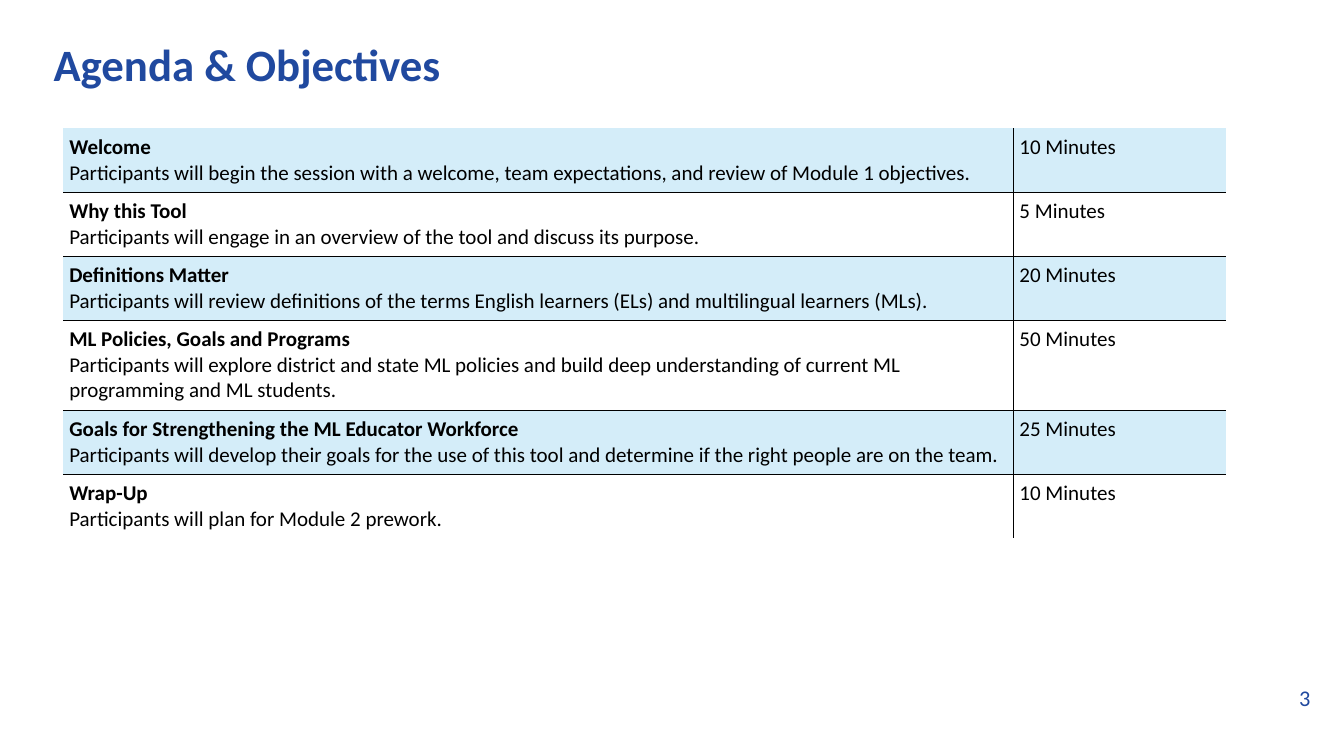
import pptx
import pptx.util
import pptx.dml.color
import pptx.enum.text
import pptx.oxml
import pptx.oxml.ns

PX = 9525
BLUE = pptx.dml.color.RGBColor(0x20, 0x49, 0x9F)
BLACK = pptx.dml.color.RGBColor(0, 0, 0)
BAND = pptx.dml.color.RGBColor(0xD4, 0xED, 0xF9)
ANCHOR = pptx.enum.text.MSO_ANCHOR
ALIGN = pptx.enum.text.PP_ALIGN

AGENDA = [
    ("Welcome",
     "Participants will begin the session with a welcome, team expectations, and review of Module 1 objectives.",
     "10 Minutes", 61),
    ("Why this Tool",
     "Participants will engage in an overview of the tool and discuss its purpose.",
     "5 Minutes", 61),
    ("Definitions Matter",
     "Participants will review definitions of the terms English learners (ELs) and multilingual learners (MLs).",
     "20 Minutes", 61),
    ("ML Policies, Goals and Programs",
     "Participants will explore district and state ML policies and build deep understanding of current ML "
     "programming and ML students.",
     "50 Minutes", 86),
    ("Goals for Strengthening the ML Educator Workforce",
     "Participants will develop their goals for the use of this tool and determine if the right people are on the team.",
     "25 Minutes", 61),
    ("Wrap-Up", "Participants will plan for Module 2 prework.", "10 Minutes", 61),
]


def px(*values):
    return [pptx.util.Emu(v * PX) for v in values]


def add_text(p, text, size=15, color=BLACK, bold=False, align=ALIGN.LEFT):
    p.alignment = align
    r = p.add_run()
    r.text = text
    r.font.name = "Calibri"
    r.font.size = pptx.util.Pt(size)
    r.font.bold = bold
    r.font.color.rgb = color


def add_label(s, box, text, anchor, **fmt):
    tf = s.shapes.add_textbox(*px(*box)).text_frame
    tf.word_wrap = True
    tf.vertical_anchor = anchor
    tf.margin_left = tf.margin_right = tf.margin_top = tf.margin_bottom = 0
    add_text(tf.paragraphs[0], text, **fmt)


def set_borders(cell, drawn):
    tcPr = cell._tc.get_or_add_tcPr()
    for side in "LRTB":
        paint = '<a:solidFill><a:srgbClr val="000000"/></a:solidFill>' if side in drawn else "<a:noFill/>"
        tcPr.append(pptx.oxml.parse_xml(
            f'<a:ln{side} {pptx.oxml.ns.nsdecls("a")} w="12700">{paint}</a:ln{side}>'))


def style_cell(cell, row, col):
    margin, = px(6)
    cell.margin_left = cell.margin_right = cell.margin_top = cell.margin_bottom = margin
    drawn = "LR"[1 - col]
    if row > 0:
        drawn += "T"
    if row < len(AGENDA) - 1:
        drawn += "B"
    set_borders(cell, drawn)
    if row % 2 == 0:
        cell.fill.solid()
        cell.fill.fore_color.rgb = BAND
    else:
        cell.fill.background()


def add_agenda(s, x, y, w, time_w):
    height = sum(item[3] for item in AGENDA)
    table = s.shapes.add_table(len(AGENDA), 2, *px(x, y, w, height)).table
    table.first_row = table.horz_banding = False
    table.columns[0].width, table.columns[1].width = px(w - time_w, time_w)
    for i, (topic, goal, time, row_h) in enumerate(AGENDA):
        table.rows[i].height, = px(row_h)
        for j in range(2):
            style_cell(table.cell(i, j), i, j)
        tf = table.cell(i, 0).text_frame
        add_text(tf.paragraphs[0], topic, bold=True)
        add_text(tf.add_paragraph(), goal)
        add_text(table.cell(i, 1).text_frame.paragraphs[0], time)


def main():
    prs = pptx.Presentation()
    prs.slide_width, prs.slide_height = px(1280, 720)
    s = prs.slides.add_slide(prs.slide_layouts[6])
    add_label(s, (51, 16, 1197, 89), "Agenda & Objectives", ANCHOR.MIDDLE,
              size=32, color=BLUE, bold=True)
    add_agenda(s, 60, 122, 1108, 203)
    add_label(s, (1153, 648, 95, 29), "3", ANCHOR.BOTTOM,
              size=16, color=BLUE, align=ALIGN.RIGHT)
    prs.save("out.pptx")


if __name__ == "__main__":
    main()
